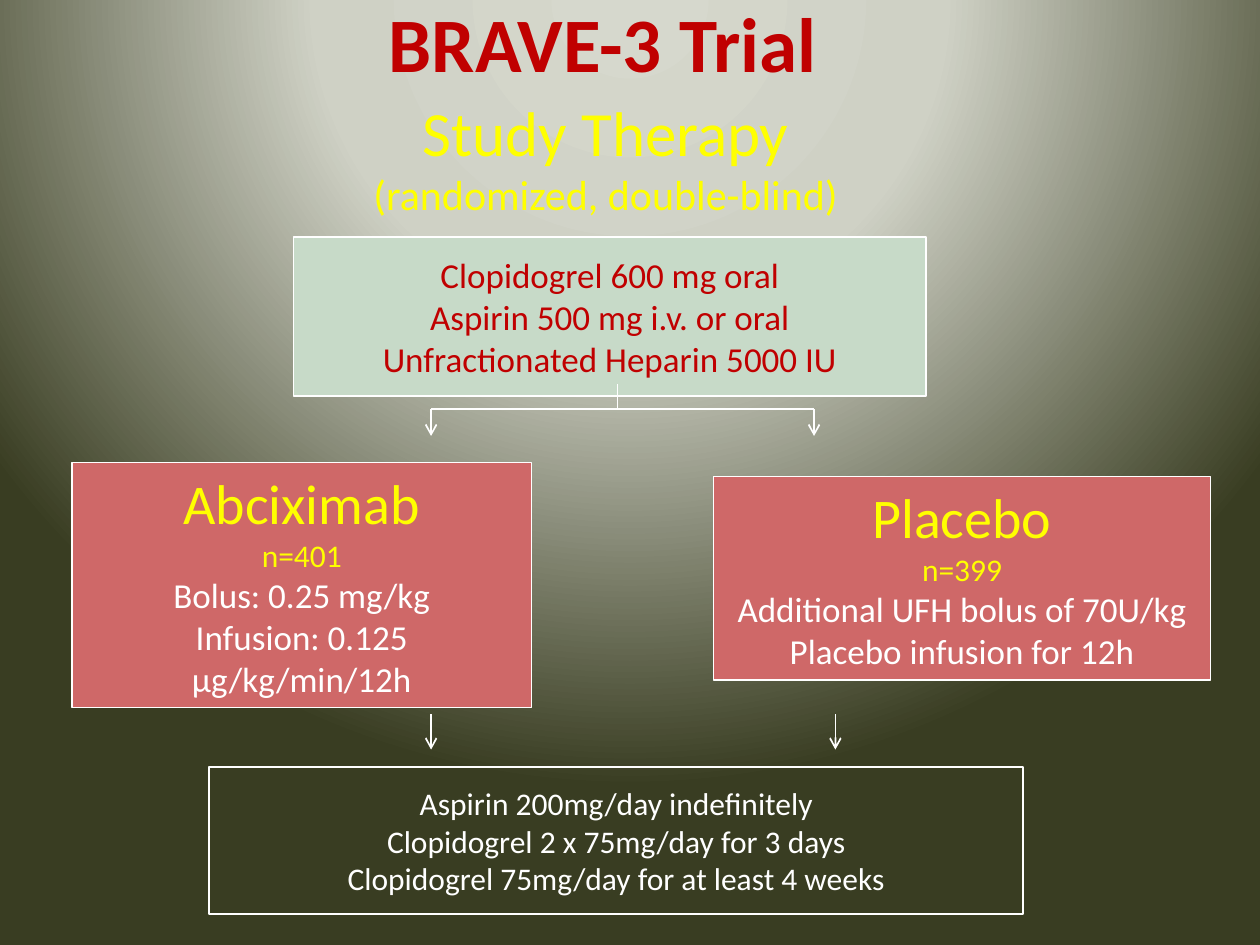
"""Build the BRAVE-3 study therapy flow chart slide."""
from lxml import etree
from pptx import Presentation
from pptx.dml.color import RGBColor
from pptx.enum.shapes import MSO_CONNECTOR, MSO_SHAPE
from pptx.enum.text import MSO_ANCHOR, PP_ALIGN
from pptx.oxml import parse_xml
from pptx.oxml.ns import qn
from pptx.util import Cm, Pt

RECTANGLE = MSO_SHAPE.RECTANGLE
STRAIGHT = MSO_CONNECTOR.STRAIGHT
TOP = MSO_ANCHOR.TOP
CENTER = PP_ALIGN.CENTER

WHITE = RGBColor(0xFF, 0xFF, 0xFF)
YELLOW = RGBColor(0xFF, 0xFF, 0x00)
RED = RGBColor(0xC0, 0x00, 0x00)
ROSE = RGBColor(0xCF, 0x68, 0x68)
MINT = RGBColor(0xC7, 0xDA, 0xC8)
GRADIENT = {
    0: RGBColor(0xD6, 0xD8, 0xCD),
    40: RGBColor(0xCF, 0xD1, 0xC5),
    100: RGBColor(0x39, 0x3D, 0x22),
}

WIDE_INSET = (0.64, 0.33)
ARM_INSET = (0.25, 0.13)


def write_lines(box, inset, lines):
    frame = box.text_frame
    side, edge = (Cm(length) for length in inset)
    frame_format = {
        "word_wrap": True, "vertical_anchor": TOP,
        "margin_left": side, "margin_right": side,
        "margin_top": edge, "margin_bottom": edge,
    }
    for name, value in frame_format.items():
        setattr(frame, name, value)
    for index, (text, size, color, bold) in enumerate(lines):
        para = frame.add_paragraph() if index else frame.paragraphs[0]
        para.alignment = CENTER
        span = para.add_run()
        span.text = text
        font_format = {"name": "Calibri", "size": Pt(size), "bold": bold}
        for name, value in font_format.items():
            setattr(span.font, name, value)
        span.font.color.rgb = color


deck = Presentation()
deck.slide_width, deck.slide_height = Cm(25.4), Cm(19.05)
page = deck.slides.add_slide(deck.slide_layouts[6])

stops = "".join(
    f'<a:gs pos="{percent * 1000}"><a:srgbClr val="{color}"/></a:gs>'
    for percent, color in GRADIENT.items()
)
background = parse_xml(
    '<p:bg xmlns:p="http://schemas.openxmlformats.org/presentationml/2006/main"'
    ' xmlns:a="http://schemas.openxmlformats.org/drawingml/2006/main">'
    f'<p:bgPr><a:gradFill rotWithShape="1"><a:gsLst>{stops}</a:gsLst>'
    '<a:path path="circle">'
    '<a:fillToRect l="50000" t="-80000" r="50000" b="180000"/></a:path>'
    '</a:gradFill><a:effectLst/></p:bgPr></p:bg>'
)
page.element.cSld.insert(0, background)

headings = [
    ((-0.2, 1.55, 24.82, 3.2), [
        ("Study Therapy", 36, YELLOW, False),
        ("(randomized, double-blind)", 24, YELLOW, False),
    ]),
    ((7.14, -0.41, 10.03, 3.38), [("BRAVE-3 Trial", 44, RED, True)]),
]
for place, lines in headings:
    box = page.shapes.add_textbox(*(Cm(length) for length in place))
    write_lines(box, WIDE_INSET, lines)

steps = [
    ((5.92, 4.78, 12.75, 3.2), MINT, 1, WIDE_INSET, [
        ("Clopidogrel 600 mg oral", 20, RED, False),
        ("Aspirin 500 mg i.v. or oral", 20, RED, False),
        ("Unfractionated Heparin 5000 IU", 20, RED, False),
    ]),
    ((14.38, 9.6, 10.03, 4.11), ROSE, 0.75, ARM_INSET, [
        ("Placebo", 32, YELLOW, False),
        ("n=399", 18, YELLOW, False),
        ("Additional UFH bolus of 70U/kg", 20, WHITE, False),
        ("Placebo infusion for 12h", 20, WHITE, False),
    ]),
    ((1.45, 9.32, 9.27, 4.95), ROSE, 0.75, ARM_INSET, [
        ("Abciximab", 32, YELLOW, False),
        ("n=401", 18, YELLOW, False),
        ("Bolus: 0.25 mg/kg", 20, WHITE, False),
        ("Infusion: 0.125 μg/kg/min/12h", 20, WHITE, False),
    ]),
    ((4.22, 15.47, 16.41, 2.95), None, 1, WIDE_INSET, [
        ("Aspirin 200mg/day indefinitely", 18, WHITE, False),
        ("Clopidogrel 2 x 75mg/day for 3 days", 18, WHITE, False),
        ("Clopidogrel 75mg/day for at least 4 weeks", 18, WHITE, False),
    ]),
]
for place, fill, weight, inset, lines in steps:
    box = page.shapes.add_shape(RECTANGLE, *(Cm(length) for length in place))
    box.shadow.inherit = False
    if fill is None:
        box.fill.background()
    else:
        box.fill.solid()
        box.fill.fore_color.rgb = fill
    box.line.color.rgb = WHITE
    box.line.width = Pt(weight)
    write_lines(box, inset, lines)

STEM_X, LEFT_X, RIGHT_X, PLACEBO_X = 12.45, 8.69, 16.41, 16.84
FORK_Y = 8.25
links = [
    (STEM_X, 7.75, STEM_X, FORK_Y, False),
    (LEFT_X, FORK_Y, RIGHT_X, FORK_Y, False),
    (RIGHT_X, FORK_Y, RIGHT_X, 8.79, True),
    (LEFT_X, FORK_Y, LEFT_X, 8.79, True),
    (PLACEBO_X, 14.4, PLACEBO_X, 15.11, True),
    (LEFT_X, 14.4, LEFT_X, 15.11, True),
]
for *ends, has_arrow in links:
    link = page.shapes.add_connector(STRAIGHT, *(Cm(length) for length in ends))
    link.line.color.rgb = WHITE
    link.line.width = Pt(1)
    properties = link.element.spPr
    if has_arrow:
        etree.SubElement(properties.find(qn("a:ln")), qn("a:tailEnd"), type="arrow")
    etree.SubElement(properties, qn("a:effectLst"))

deck.save("out.pptx")
